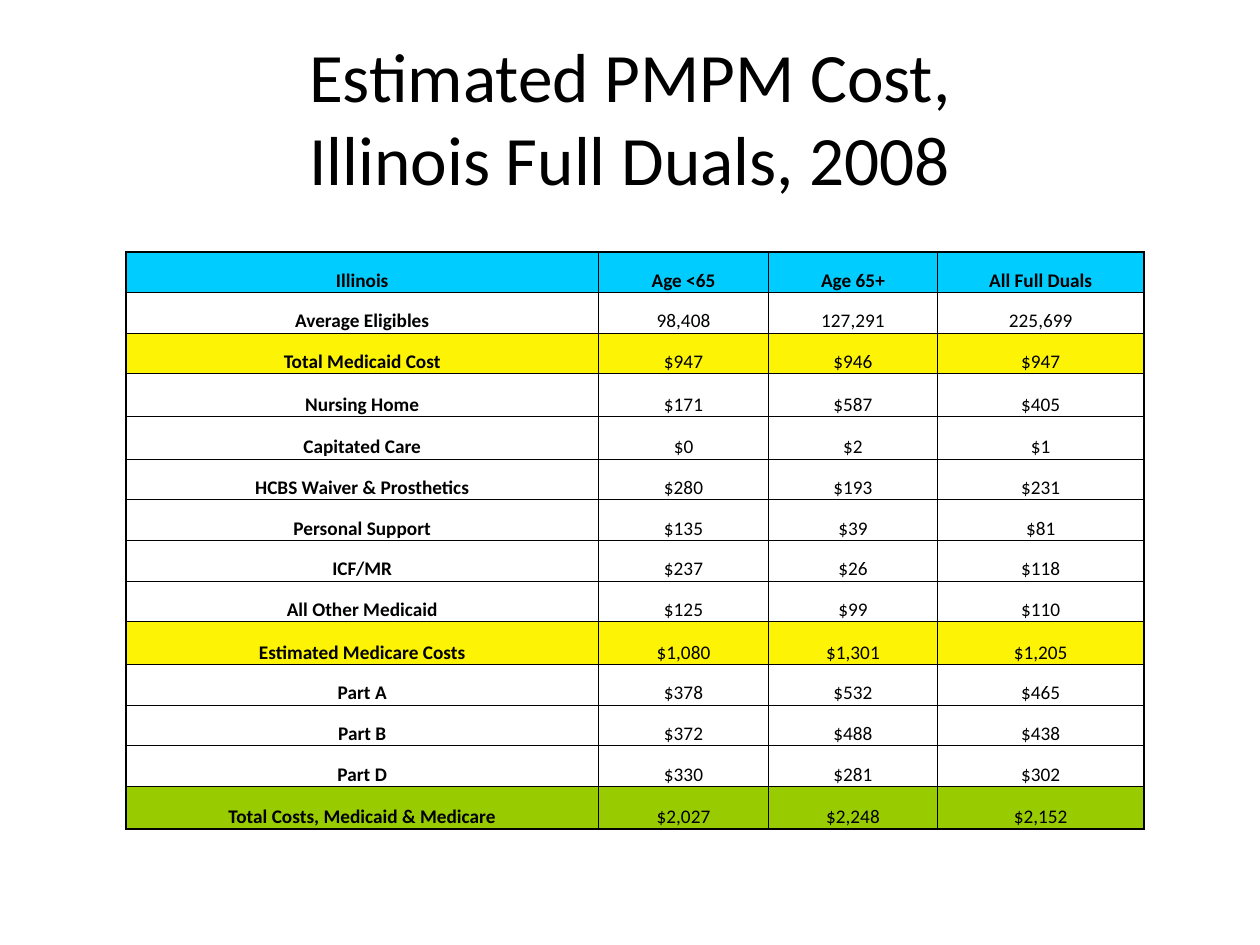
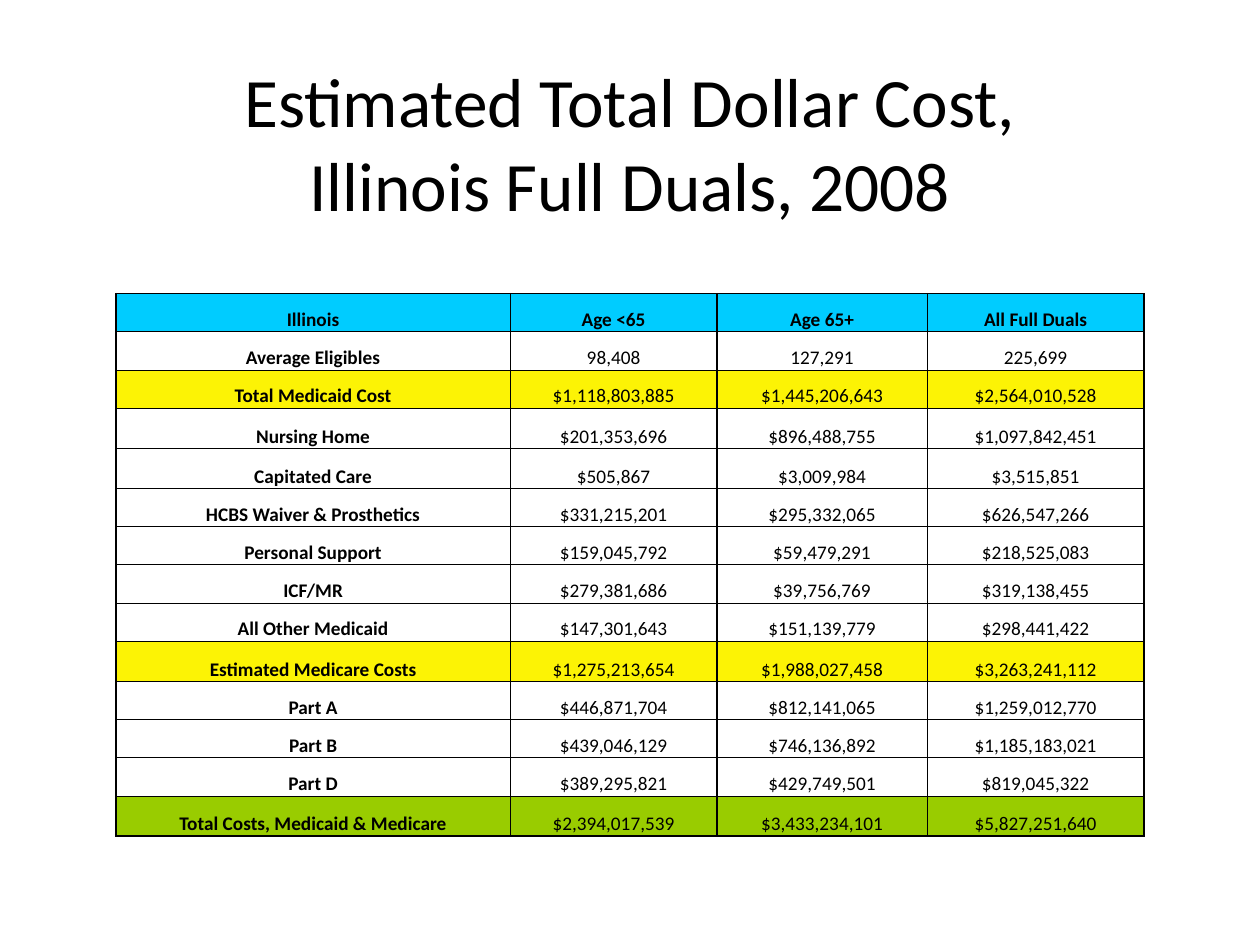
from lxml import etree
from pptx import Presentation
from pptx import util as u
from pptx.dml.color import RGBColor
from pptx.enum import text as t
from pptx.oxml import ns

COLORS = {
    "text": "000000",
    "border": "000000",
    "header": "00CCFF",
    "subtotal": "FCF305",
    "total": "99CC00",
    "plain": "FFFFFF",
}
FONT = "Calibri"
THIN, THICK = 0.5, 1
TITLE_ONLY_LAYOUT = 5

HEADINGS = ["Illinois", "Age <65", "Age 65+", "All Full Duals"]
LABELS = [
    "Average Eligibles", "Total Medicaid Cost", "Nursing Home", "Capitated Care",
    "HCBS Waiver & Prosthetics", "Personal Support", "ICF/MR", "All Other Medicaid",
    "Estimated Medicare Costs", "Part A", "Part B", "Part D",
    "Total Costs, Medicaid & Medicare",
]
ROW_KINDS = {
    "Illinois": "header",
    "Total Medicaid Cost": "subtotal",
    "Estimated Medicare Costs": "subtotal",
    "Total Costs, Medicaid & Medicare": "total",
}
TALL_ROWS = {
    "Nursing Home", "Capitated Care", "Estimated Medicare Costs",
    "Total Costs, Medicaid & Medicare",
}
TALL_RATIO = 1.05

ELIGIBLES = ("98,408", "127,291", "225,699")
PMPM_COSTS = [
    ELIGIBLES,
    ("$947", "$946", "$947"),
    ("$171", "$587", "$405"),
    ("$0", "$2", "$1"),
    ("$280", "$193", "$231"),
    ("$135", "$39", "$81"),
    ("$237", "$26", "$118"),
    ("$125", "$99", "$110"),
    ("$1,080", "$1,301", "$1,205"),
    ("$378", "$532", "$465"),
    ("$372", "$488", "$438"),
    ("$330", "$281", "$302"),
    ("$2,027", "$2,248", "$2,152"),
]
DOLLAR_COSTS = [
    ELIGIBLES,
    ("$1,118,803,885", "$1,445,206,643", "$2,564,010,528"),
    ("$201,353,696", "$896,488,755", "$1,097,842,451"),
    ("$505,867", "$3,009,984", "$3,515,851"),
    ("$331,215,201", "$295,332,065", "$626,547,266"),
    ("$159,045,792", "$59,479,291", "$218,525,083"),
    ("$279,381,686", "$39,756,769", "$319,138,455"),
    ("$147,301,643", "$151,139,779", "$298,441,422"),
    ("$1,275,213,654", "$1,988,027,458", "$3,263,241,112"),
    ("$446,871,704", "$812,141,065", "$1,259,012,770"),
    ("$439,046,129", "$746,136,892", "$1,185,183,021"),
    ("$389,295,821", "$429,749,501", "$819,045,322"),
    ("$2,394,017,539", "$3,433,234,101", "$5,827,251,640"),
]


def write_text(frame, content, size, bold=False, color="text"):
    """Fill a text frame with one centred paragraph; a vertical tab breaks the line."""
    paragraph = frame.paragraphs[0]
    paragraph.text = content
    paragraph.alignment = t.PP_ALIGN.CENTER
    for run in paragraph.runs:
        run.font.name = FONT
        run.font.size = u.Pt(size)
        run.font.bold = bold
        run.font.color.rgb = RGBColor.from_string(COLORS[color])


def add_borders(cell, **widths):
    """Draw cell borders; widths in points are keyed L, R, T, B in that order."""
    properties = cell._tc.get_or_add_tcPr()
    for side, width in widths.items():
        line = etree.SubElement(properties, ns.qn(f"a:ln{side}"), w=str(u.Pt(width)))
        fill = etree.SubElement(line, ns.qn("a:solidFill"))
        etree.SubElement(fill, ns.qn("a:srgbClr"), val=COLORS["border"])


def format_cell(cell, content, kind, bold):
    cell.margin_left = cell.margin_right = cell.margin_top = u.Inches(0.01)
    cell.margin_bottom = 0
    cell.vertical_anchor = t.MSO_ANCHOR.BOTTOM
    write_text(cell.text_frame, content, size=11, bold=bold)
    add_borders(cell, L=THICK, R=THICK,
                T=THICK if kind == "header" else THIN,
                B=THICK if kind == "total" else THIN)
    cell.fill.solid()
    cell.fill.fore_color.rgb = RGBColor.from_string(COLORS[kind])


def add_title(slide, content, top):
    title = slide.shapes.title
    title.left, title.top = u.Inches(0.5), u.Inches(top)
    title.width, title.height = u.Inches(9), u.Inches(1.25)
    frame = title.text_frame
    frame.auto_size = t.MSO_AUTO_SIZE.NONE
    frame.vertical_anchor = t.MSO_ANCHOR.MIDDLE
    write_text(frame, content, size=39.6)


def add_cost_table(slide, left, top, height, column_widths, costs):
    rows = [HEADINGS] + [[label, *values] for label, values in zip(LABELS, costs)]
    table = slide.shapes.add_table(
        len(rows), len(HEADINGS), u.Inches(left), u.Inches(top),
        u.Inches(sum(column_widths)), u.Inches(height)).table
    table.first_row = table.horz_banding = False
    for column, width in zip(table.columns, column_widths):
        column.width = u.Inches(width)

    weights = [TALL_RATIO if row[0] in TALL_ROWS else 1 for row in rows]
    for row_index, (row, weight) in enumerate(zip(rows, weights)):
        table.rows[row_index].height = u.Inches(height * weight / sum(weights))
        kind = ROW_KINDS.get(row[0], "plain")
        for column_index, content in enumerate(row):
            bold = kind == "header" or column_index == 0
            format_cell(table.cell(row_index, column_index), content, kind, bold)


def add_cost_slide(presentation, title, title_top, **table_format):
    slide = presentation.slides.add_slide(presentation.slide_layouts[TITLE_ONLY_LAYOUT])
    add_title(slide, title, title_top)
    add_cost_table(slide, **table_format)


def main():
    presentation = Presentation()
    presentation.slide_width, presentation.slide_height = u.Inches(10), u.Inches(7.5)
    add_cost_slide(
        presentation, "Estimated PMPM Cost,\vIllinois Full Duals, 2008", 0.3,
        left=1, top=2, height=4.58,
        column_widths=[3.75, 1.35, 1.34, 1.64], costs=PMPM_COSTS)
    add_cost_slide(
        presentation, "Estimated Total Dollar Cost,\vIllinois Full Duals, 2008", 0.5,
        left=0.92, top=2.33, height=4.31,
        column_widths=[3.13, 1.64, 1.67, 1.72], costs=DOLLAR_COSTS)
    presentation.save("out.pptx")


if __name__ == "__main__":
    main()
